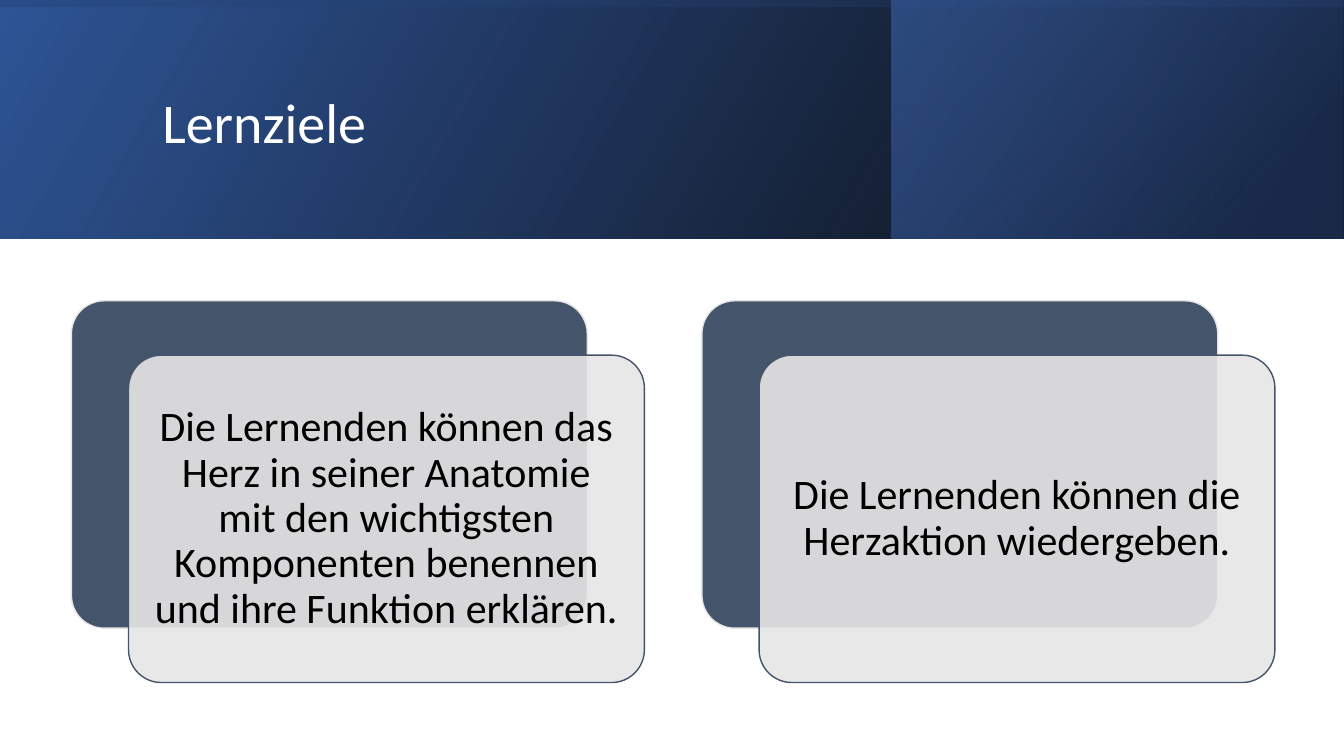
from pptx import Presentation
from pptx.dml.color import RGBColor as Rgb
from pptx.enum.shapes import MSO_SHAPE as Kind
from pptx.enum.text import MSO_ANCHOR as Anchor, PP_ALIGN as Align
from pptx.oxml.ns import qn
from pptx.util import Cm, Pt
from lxml.etree import SubElement as Sub

# Content
TITLE = "Lernziele"
GOALS = [
    "Die Lernenden können das Herz in seiner Anatomie mit den "
    "wichtigsten Komponenten benennen und ihre Funktion erklären.",
    "Die Lernenden können die Herzaktion wiedergeben.",
]

# Theme
THEME = dict(font="Calibri", head=40, body=30, line=1,
             white="FFFFFF", black="000000", slate="44546A", pale="E7E6E6",
             blue="2F5597", navy="203864", sky="4472C4")

# Sizes in cm
WIDE, HIGH, BAND = 33.87, 19.05, 6.02
SIDE = 11.39
CARD = (13.0, 8.25)
LEFT, TOP, STEP = 1.8, 7.58, 15.89
SHIFT = (1.44, 1.37)

# Header layers: box, turn, angle, stops (position, colour, opacity %)
LAYERS = [
    ((0, 0, WIDE, BAND), 0, 330,
     [(0, "black", 96), (100, "blue", 100)]),
    ((WIDE - SIDE - 0.02, 0, SIDE, BAND), 0, 320,
     [(19, "navy", 68), (100, "sky", 48)]),
    (((WIDE - BAND) / 2, (BAND - WIDE) / 2, BAND, WIDE), 270, 350,
     [(23, "blue", 16), (99, "black", 45)]),
]


def rgb(name):
    return Rgb.from_string(THEME[name])


def put(obj, **vals):
    for key, val in vals.items():
        setattr(obj, key, val)


def fade(fill, share):
    """Set the opacity of the colour inside a fill or gradient stop."""
    tone = next(fill.iter(qn("a:srgbClr")))
    Sub(tone, qn("a:alpha"), val=str(share * 1000))


def add(slide, kind, box):
    shape = slide.shapes.add_shape(kind, *map(Cm, box))
    shape.shadow.inherit = False
    return shape


def layer(slide, box, turn, angle, stops):
    shape = add(slide, Kind.RECTANGLE, box)
    shape.rotation = turn
    shape.line.fill.background()
    shape.fill.gradient()
    shape.fill.gradient_angle = 360 - angle
    marks = shape._element.spPr.iter(qn("a:gs"))
    for stop, mark, (pos, name, share) in zip(
            shape.fill.gradient_stops, marks, stops):
        stop.position = pos / 100
        stop.color.rgb = rgb(name)
        fade(mark, share)
    shape._element.spPr.find(qn("a:xfrm")).set("flipH", "1")


def card(slide, left, top, fill, edge):
    shape = add(slide, Kind.ROUNDED_RECTANGLE, (left, top, *CARD))
    shape.adjustments[0] = 0.1
    shape.fill.solid()
    shape.fill.fore_color.rgb = rgb(fill)
    shape.line.color.rgb = rgb(edge)
    shape.line.width = Pt(THEME["line"])
    return shape


def write(shape, text, size, tone, align, pad):
    frame = shape.text_frame
    frame.text = text
    put(frame, word_wrap=True, vertical_anchor=Anchor.MIDDLE,
        **{f"margin_{side}": Cm(pad)
           for side in ("left", "right", "top", "bottom")})
    para = frame.paragraphs[0]
    put(para, alignment=align, line_spacing=0.9)
    font = para.runs[0].font
    put(font, name=THEME["font"], size=Pt(THEME[size]))
    font.color.rgb = rgb(tone)


def main():
    deck = Presentation()
    put(deck, slide_width=Cm(WIDE), slide_height=Cm(HIGH))
    slide = deck.slides.add_slide(deck.slide_layouts[5])

    # Header band
    for item in LAYERS:
        layer(slide, *item)

    # Title, in front of the band
    title = slide.shapes.title
    put(title, left=Cm(3.84), top=Cm(0.97), width=Cm(27), height=Cm(4.37))
    write(title, TITLE, "head", "white", Align.LEFT, 0.25)
    slide.shapes._spTree.append(title._element)

    # Goal cards, each with a dark card behind
    for num, goal in enumerate(GOALS):
        left = LEFT + num * STEP
        card(slide, left, TOP, "slate", "pale")
        front = card(slide, left + SHIFT[0], TOP + SHIFT[1], "pale", "slate")
        fade(front._element.spPr.find(qn("a:solidFill")), 90)
        write(front, goal, "body", "black", Align.CENTER, 0.3)

    deck.save("out.pptx")


if __name__ == "__main__":
    main()
